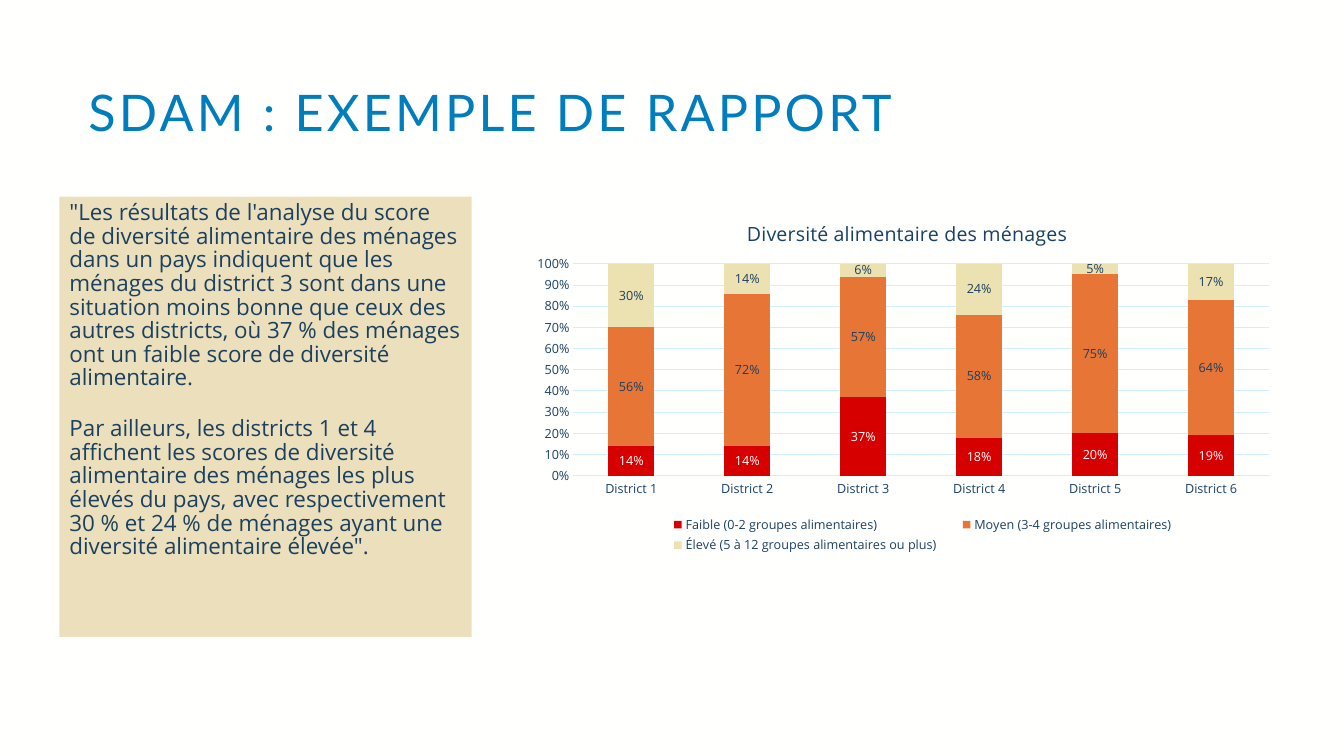
from lxml import etree
from pptx import Presentation
from pptx.chart.data import CategoryChartData
from pptx.dml.color import RGBColor
from pptx.enum.chart import (XL_CHART_TYPE, XL_LABEL_POSITION,
                             XL_LEGEND_POSITION, XL_TICK_MARK)
from pptx.enum.shapes import MSO_SHAPE
from pptx.enum.text import MSO_ANCHOR, MSO_AUTO_SIZE, PP_ALIGN
from pptx.oxml.ns import qn
from pptx.util import Pt

STACKED = XL_CHART_TYPE.COLUMN_STACKED
CENTER = XL_LABEL_POSITION.CENTER
BOTTOM = XL_LEGEND_POSITION.BOTTOM
NO_TICK = XL_TICK_MARK.NONE
RECTANGLE = MSO_SHAPE.RECTANGLE
TOP, MIDDLE = MSO_ANCHOR.TOP, MSO_ANCHOR.MIDDLE
LEFT = PP_ALIGN.LEFT
FIXED = MSO_AUTO_SIZE.NONE

NAVY, BLUE, WHITE = "1A4161", "007DBC", "FFFFFE"
SAND, PALE_BLUE = "ECDFBB", "CFEFFF"

TITLE = "SDAM : EXEMPLE DE RAPPORT"
FINDINGS = [
    "\"Les résultats de l'analyse du score de diversité alimentaire des "
    "ménages dans un pays indiquent que les ménages du district 3 sont dans "
    "une situation moins bonne que ceux des autres districts, où 37 % des "
    "ménages ont un faible score de diversité alimentaire.",
    "Par ailleurs, les districts 1 et 4 affichent les scores de diversité "
    "alimentaire des ménages les plus élevés du pays, avec respectivement "
    "30 % et 24 % de ménages ayant une diversité alimentaire élevée\".",
]
CHART_TITLE = "Diversité alimentaire des ménages"
# Name, bar colour, label colour, values per district
SERIES = [
    ("Faible (0-2 groupes alimentaires)", "D70000", WHITE,
     (0.14, 0.14, 0.37, 0.18, 0.2, 0.19)),
    ("Moyen (3-4 groupes alimentaires)", "E67536", NAVY,
     (0.56, 0.72, 0.57, 0.58, 0.75, 0.64)),
    ("Élevé (5 à 12 groupes alimentaires ou plus)", "ECE1B1", NAVY,
     (0.3, 0.14, 0.06, 0.24, 0.05, 0.17)),
]


def color(value):
    return RGBColor.from_string(value)


def set_all(target, formats):
    for name, value in formats.items():
        setattr(target, name, value)


def set_font(font, size, fill, name="Open Sans"):
    set_all(font, {"size": Pt(size), "name": name, "bold": False})
    font.color.rgb = color(fill)


def set_fill(fill, value):
    fill.solid()
    fill.fore_color.rgb = color(value)


def set_line(line, value):
    set_fill(line.fill, value)
    line.width = Pt(0.75)


def place(element, index, inner=False, **fractions):
    """Give a chart part a manual layout, in fractions of the chart."""
    for old in element.findall(qn("c:layout")):
        element.remove(old)
    layout = etree.Element(qn("c:layout"))
    manual = etree.SubElement(layout, qn("c:manualLayout"))
    settings = {"layoutTarget": "inner"} if inner else {}
    settings.update(xMode="edge", yMode="edge", **fractions)
    for name, value in settings.items():
        etree.SubElement(manual, qn("c:" + name)).set("val", str(value))
    element.insert(index, layout)


def add_title(slide, left, top, width, height):
    title = slide.shapes.title
    set_all(title, {"left": Pt(left), "top": Pt(top),
                    "width": Pt(width), "height": Pt(height)})
    set_all(title.text_frame, {"text": TITLE, "vertical_anchor": MIDDLE,
                               "auto_size": FIXED, "word_wrap": True})
    paragraph = title.text_frame.paragraphs[0]
    set_all(paragraph, {"alignment": LEFT, "line_spacing": 0.9})
    run = paragraph.runs[0]
    set_font(run.font, 36, BLUE, "Lato")
    run.font._element.set("spc", "230")


def add_findings(slide, left, top, width, height):
    panel = slide.shapes.add_shape(RECTANGLE, Pt(left), Pt(top),
                                   Pt(width), Pt(height))
    panel.shadow.inherit = False
    set_fill(panel.fill, SAND)
    panel.line.fill.background()
    frame = panel.text_frame
    set_all(frame, {"vertical_anchor": TOP, "word_wrap": True,
                    "auto_size": FIXED})
    for index, text in enumerate(FINDINGS):
        paragraph = frame.paragraphs[0] if index == 0 else frame.add_paragraph()
        set_all(paragraph, {"alignment": LEFT, "line_spacing": 0.88})
        if index:
            paragraph.space_before = Pt(19.2)
        run = paragraph.add_run()
        run.text = text
        set_font(run.font, 16, NAVY)


def format_axes(chart):
    for axis in (chart.category_axis, chart.value_axis):
        set_all(axis, {"major_tick_mark": NO_TICK, "minor_tick_mark": NO_TICK})
        set_font(axis.tick_labels.font, 9, NAVY)
    set_line(chart.category_axis.format.line, PALE_BLUE)
    values = chart.value_axis
    set_all(values, {"minimum_scale": 0, "maximum_scale": 1,
                     "major_unit": 0.1, "has_major_gridlines": True})
    values.format.line.fill.background()
    set_line(values.major_gridlines.format.line, PALE_BLUE)
    set_all(values.tick_labels, {"number_format": "0%",
                                 "number_format_is_linked": False})


def add_diversity_chart(slide, left, top, width, height):
    data = CategoryChartData(number_format="0%")
    data.categories = [f"District {number}" for number in range(1, 7)]
    for name, _, _, values in SERIES:
        data.add_series(name, values)
    chart = slide.shapes.add_chart(STACKED, Pt(left), Pt(top), Pt(width),
                                   Pt(height), data).chart
    set_font(chart.font, 10, NAVY)

    # Bars and their labels
    plot = chart.plots[0]
    set_all(plot, {"gap_width": 150, "overlap": 100,
                   "vary_by_categories": False})
    for series, (_, fill, label_color, _) in zip(plot.series, SERIES):
        set_fill(series.format.fill, fill)
        labels = series.data_labels
        set_all(labels, {"show_value": True, "position": CENTER,
                         "number_format": "0%",
                         "number_format_is_linked": False})
        set_font(labels.font, 9, label_color)
    format_axes(chart)

    # Title and legend
    chart.has_title = True
    chart.chart_title.text_frame.text = CHART_TITLE
    set_font(chart.chart_title.text_frame.paragraphs[0].runs[0].font, 14, NAVY)
    chart.has_legend = True
    set_all(chart.legend, {"position": BOTTOM, "include_in_layout": False})
    set_font(chart.legend.font, 9, NAVY)

    # Positions inside the chart
    place(chart.chart_title._element, 1, x=0.29, y=0.05)
    place(chart.legend._element, 1, x=0.17, y=0.87, w=0.71, h=0.12)
    place(plot._element.getparent(), 0, inner=True,
          x=0.067, y=0.185, w=0.912, h=0.582)


def build_report_slide(presentation):
    slide = presentation.slides.add_slide(presentation.slide_layouts[5])
    set_fill(slide.background.fill, WHITE)
    add_title(slide, 56, 56, 870.5, 52)
    add_findings(slide, 42.5, 140.4, 294.5, 314.6)
    add_diversity_chart(slide, 373, 140.4, 545, 260)


def main():
    presentation = Presentation()
    set_all(presentation, {"slide_width": Pt(960), "slide_height": Pt(540)})
    build_report_slide(presentation)
    presentation.save("out.pptx")


if __name__ == "__main__":
    main()
